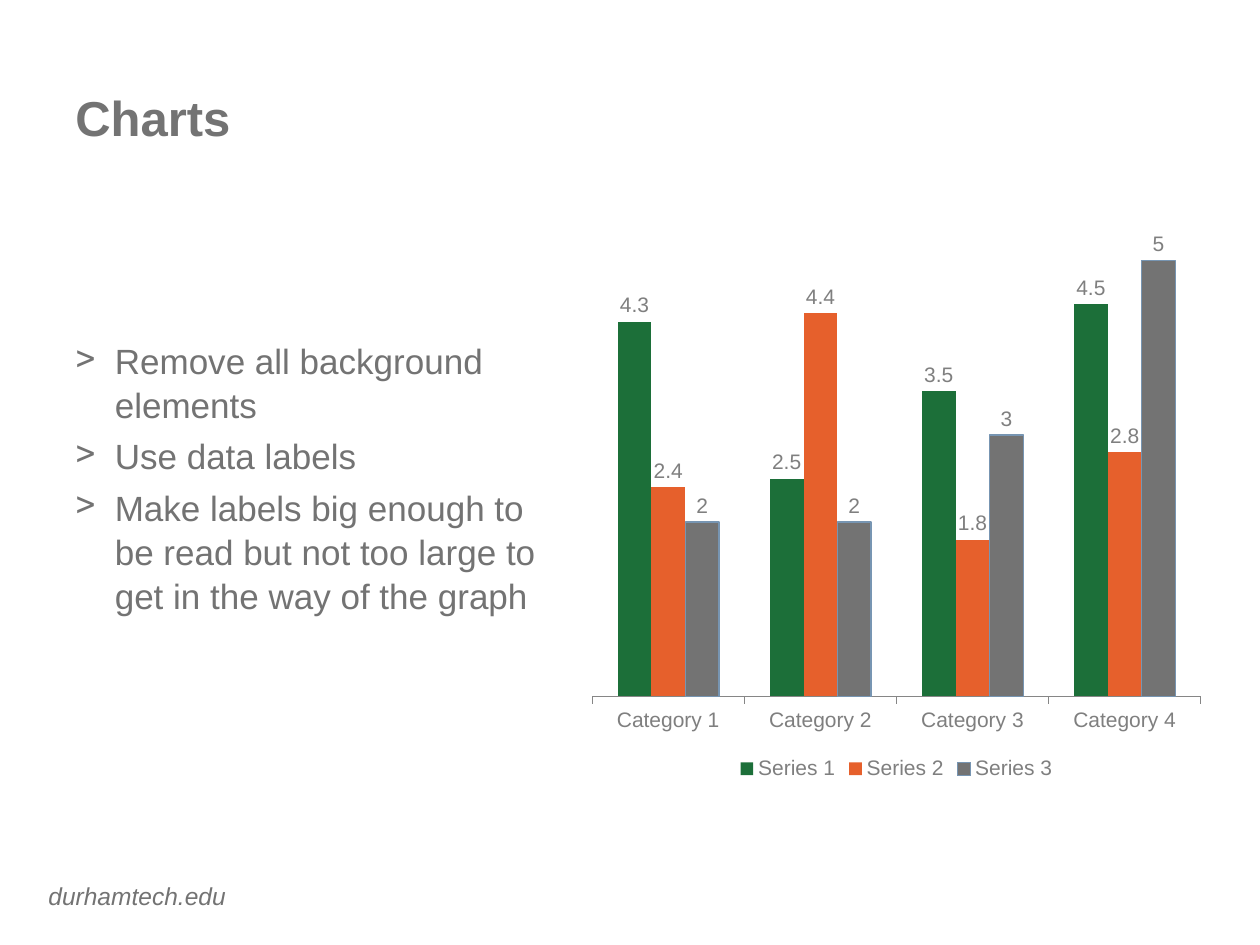
import pptx
import pptx.chart.data
import pptx.dml.color
import pptx.enum.chart
import pptx.enum.text
import pptx.oxml
import pptx.oxml.ns
import pptx.util

Pt = pptx.util.Pt
RGBColor = pptx.dml.color.RGBColor

GREY = RGBColor(0x73, 0x73, 0x73)
LABEL_GREY = RGBColor(0x7F, 0x7F, 0x7F)
AXIS_GREY = RGBColor(0x86, 0x86, 0x86)
GREEN = RGBColor(0x1C, 0x6F, 0x39)
ORANGE = RGBColor(0xE6, 0x60, 0x2C)
OUTLINE_BLUE = RGBColor(0x77, 0x95, 0xB2)

FONT = "Arial"
CATEGORIES = ["Category 1", "Category 2", "Category 3", "Category 4"]
SERIES = [
    ("Series 1", (4.3, 2.5, 3.5, 4.5), GREEN, None),
    ("Series 2", (2.4, 4.4, 1.8, 2.8), ORANGE, None),
    ("Series 3", (2, 2, 3, 5), GREY, OUTLINE_BLUE),
]
ADVICE = [
    "Remove all background elements",
    "Use data labels",
    "Make labels big enough to be read but not too large to get in the way of the graph",
]


def style_font(font, size, color, bold=False, italic=False):
    font.name = FONT
    font.size = Pt(size)
    font.color.rgb = color
    font.bold = bold
    font.italic = italic


def add_line(slide, text, left, top, width, height, size, wrap=True, **style):
    frame = slide.shapes.add_textbox(Pt(left), Pt(top), Pt(width), Pt(height)).text_frame
    frame.word_wrap = wrap
    frame.vertical_anchor = pptx.enum.text.MSO_ANCHOR.MIDDLE
    frame.text = text
    style_font(frame.paragraphs[0].runs[0].font, size, GREY, **style)


def add_bullets(slide, items, left, top, width, height):
    frame = slide.shapes.add_textbox(Pt(left), Pt(top), Pt(width), Pt(height)).text_frame
    frame.word_wrap = True
    for index, item in enumerate(items):
        paragraph = frame.add_paragraph() if index else frame.paragraphs[0]
        paragraph.text = item
        paragraph.line_spacing = 1.05
        if index:
            paragraph.space_before = Pt(4)
        properties = paragraph._p.get_or_add_pPr()
        properties.set("marL", str(Pt(22.5)))
        properties.set("indent", str(Pt(-22.5)))
        bullet = pptx.oxml.parse_xml(
            f'<a:buChar {pptx.oxml.ns.nsdecls("a")} char="&gt;"/>')
        properties.append(bullet)
        style_font(paragraph.runs[0].font, 20, GREY)


def style_series(series, color, outline):
    series.format.fill.solid()
    series.format.fill.fore_color.rgb = color
    series.invert_if_negative = False
    if outline is None:
        series.format.line.fill.background()
    else:
        series.format.line.color.rgb = outline
        series.format.line.width = Pt(0.75)
    labels = series.data_labels
    labels.show_value = True
    labels.position = pptx.enum.chart.XL_LABEL_POSITION.OUTSIDE_END
    style_font(labels.font, 12, LABEL_GREY)


def add_column_chart(slide, left, top, width, height):
    data = pptx.chart.data.CategoryChartData()
    data.categories = CATEGORIES
    for name, values, _, _ in SERIES:
        data.add_series(name, values)
    chart = slide.shapes.add_chart(
        pptx.enum.chart.XL_CHART_TYPE.COLUMN_CLUSTERED,
        Pt(left), Pt(top), Pt(width), Pt(height), data).chart
    chart.has_title = False
    style_font(chart.font, 12, LABEL_GREY)

    plot = chart.plots[0]
    plot.gap_width = 150
    plot.overlap = 0
    plot.vary_by_categories = False
    for series, (_, _, color, outline) in zip(plot.series, SERIES):
        style_series(series, color, outline)

    value_axis = chart.value_axis
    value_axis.minimum_scale = 0
    value_axis.maximum_scale = 6
    value_axis.has_major_gridlines = False
    value_axis.visible = False

    category_axis = chart.category_axis
    category_axis.major_tick_mark = pptx.enum.chart.XL_TICK_MARK.OUTSIDE
    category_axis.format.line.color.rgb = AXIS_GREY
    style_font(category_axis.tick_labels.font, 12, LABEL_GREY)

    chart.has_legend = True
    chart.legend.position = pptx.enum.chart.XL_LEGEND_POSITION.BOTTOM
    chart.legend.include_in_layout = False
    style_font(chart.legend.font, 12, LABEL_GREY)


def main():
    """Build the slide on charts and save it."""
    presentation = pptx.Presentation()
    presentation.slide_width = Pt(720)
    presentation.slide_height = Pt(540)
    slide = presentation.slides.add_slide(presentation.slide_layouts[6])
    add_line(slide, "durhamtech.edu", 20.6, 499.7, 116, 24.5, 14, wrap=False, italic=True)
    add_column_chart(slide, 331.2, 92.2, 362.2, 356.4)
    add_bullets(slide, ADVICE, 36, 189.4, 284.4, 229.7)
    add_line(slide, "Charts", 36, 21.6, 648, 90, 28, bold=True)
    presentation.save("out.pptx")


if __name__ == "__main__":
    main()
